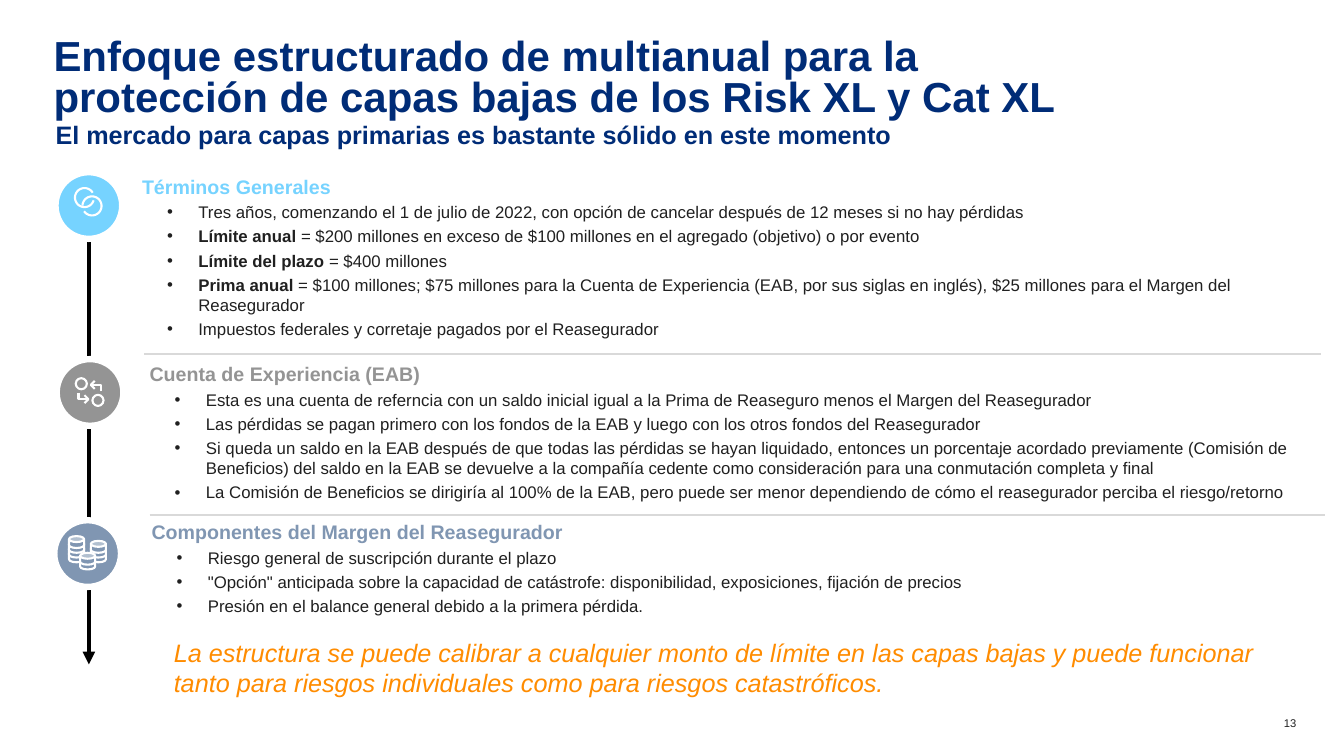
"""Build the slide on the multi-year structure for low layers."""
from math import cos, radians, sin

from lxml.etree import SubElement
from pptx import Presentation
from pptx.dml.color import RGBColor
from pptx.enum.shapes import MSO_CONNECTOR as Link, MSO_SHAPE as Kind
from pptx.enum.text import PP_ALIGN as Align
from pptx.oxml.ns import qn
from pptx.util import Cm, Pt

NAVY = RGBColor(0x00, 0x2C, 0x77)
INK = RGBColor(0x20, 0x20, 0x20)
SKY = RGBColor(0x76, 0xD3, 0xFF)
GRAY = RGBColor(0x94, 0x94, 0x94)
STEEL = RGBColor(0x80, 0x96, 0xB2)
ORANGE = RGBColor(0xFF, 0x8C, 0x00)
RULE = RGBColor(0xD9, 0xD9, 0xD9)
BLACK = RGBColor(0, 0, 0)
WHITE = RGBColor(0xFF, 0xFF, 0xFF)
THIN = 1.5

TERMS = [
    ("", "Tres años, comenzando el 1 de julio de 2022, con opción de cancelar "
         "después de 12 meses si no hay pérdidas"),
    ("Límite anual ", "= $200 millones en exceso de $100 millones en el agregado "
                      "(objetivo) o por evento"),
    ("Límite del plazo ", "= $400 millones"),
    ("Prima anual", " = $100 millones; $75 millones para la Cuenta de Experiencia "
                    "(EAB, por sus siglas en inglés), $25 millones para el Margen "
                    "del Reasegurador"),
    ("", "Impuestos federales y corretaje pagados por el Reasegurador"),
]
FUNDS = [
    ("", "Esta es una cuenta de referncia con un saldo inicial igual a la Prima de "
         "Reaseguro menos el Margen del Reasegurador"),
    ("", "Las pérdidas se pagan primero con los fondos de la EAB y luego con los "
         "otros fondos del Reasegurador"),
    ("", "Si queda un saldo en la EAB después de que todas las pérdidas se hayan "
         "liquidado, entonces un porcentaje acordado previamente (Comisión de "
         "Beneficios) del saldo en la EAB se devuelve a la compañía cedente como "
         "consideración para una conmutación completa y final"),
    ("", "La Comisión de Beneficios se dirigiría al 100% de la EAB, pero puede ser "
         "menor dependiendo de cómo el reasegurador perciba el riesgo/retorno"),
]
MARGIN = [
    ("", "Riesgo general de suscripción durante el plazo"),
    ("", "\"Opción\" anticipada sobre la capacidad de catástrofe: disponibilidad, "
         "exposiciones, fijación de precios"),
    ("", "Presión en el balance general debido a la primera pérdida."),
]


def style(font, size, color, bold=False, italic=False):
    """Set the look of a font."""
    font.name, font.size, font.bold, font.italic = "Arial", Pt(size), bold, italic
    font.color.rgb = color


def add_text(slide, box, text, size, color, bold=False, italic=False):
    """Add a text box without margins and return its frame."""
    frame = slide.shapes.add_textbox(*map(Cm, box)).text_frame
    frame.word_wrap = True
    frame.margin_left = frame.margin_right = 0
    frame.margin_top = frame.margin_bottom = 0
    frame.text = text
    for run in frame.paragraphs[0].runs:
        style(run.font, size, color, bold, italic)
    return frame


def add_block(slide, box, head, color, items):
    """Add a coloured heading with its bullets."""
    frame = add_text(slide, box, head, 14, color, True)
    for lead, rest in items:
        para = frame.add_paragraph()
        props = para._p.get_or_add_pPr()
        props.set("marL", str(Cm(1.42)))
        props.set("indent", str(-Cm(0.79)))
        SubElement(props, qn("a:buFont"), typeface="Arial")
        SubElement(props, qn("a:buChar"), char="•")
        para.level = 1
        para.space_before = Pt(2.8)
        for part in filter(None, (lead, rest)):
            run = para.add_run()
            run.text = part
            style(run.font, 12, INK, part == lead)


def add_line(slide, start, end, color, width):
    """Add a straight line and return its line element."""
    line = slide.shapes.add_connector(Link.STRAIGHT, *map(Cm, start + end))
    line.line.color.rgb = color
    line.line.width = Pt(width)
    SubElement(line._element.spPr, qn("a:effectLst"))
    return line.line._get_or_add_ln()


def add_form(slide, kind, box, fill, width):
    """Add a preset shape with a white outline."""
    form = slide.shapes.add_shape(kind, *map(Cm, box))
    form.shadow.inherit = False
    if fill is None:
        form.fill.background()
    else:
        form.fill.solid()
        form.fill.fore_color.rgb = fill
    form.line.color.rgb = WHITE
    form.line.width = Pt(width)
    return form


def add_stroke(slide, points):
    """Add an open white outline through the points."""
    first, *rest = [(Cm(x), Cm(y)) for x, y in points]
    maker = slide.shapes.build_freeform(*first)
    maker.add_line_segments(rest, close=False)
    form = maker.convert_to_shape()
    form.shadow.inherit = False
    form.fill.background()
    form.line.color.rgb = WHITE
    form.line.width = Pt(THIN)


def add_rings(slide):
    """Draw two linked rings, each with a gap."""
    size = 0.24
    for x, y, start, stop in ((2.13, 4.98, 17, 333), (2.32, 5.19, 182, 512)):
        turns = [radians(deg) for deg in range(start, stop, 6)]
        add_stroke(slide, [(x + size * cos(t), y + size * sin(t)) for t in turns])


def add_swap(slide):
    """Draw two circles and two arrows, alike under a half turn."""
    x, y, size = 2.26, 9.88, 0.14
    stem = ((0.28, -0.02), (0.28, -0.18), (0.05, -0.18))
    tip = ((0.13, -0.28), (0.03, -0.18), (0.13, -0.08))
    for sign in (1, -1):
        side = sign * 0.21 - size
        add_form(slide, Kind.OVAL, (x + side, y + side, 2 * size, 2 * size),
                 None, THIN)
        for part in (stem, tip):
            add_stroke(slide, [(x + sign * a, y + sign * b) for a, b in part])


def add_coins(slide):
    """Draw three stacks of coins, each from the bottom up."""
    for x, y, count in ((1.74, 13.51, 4), (2.29, 13.63, 3), (2.02, 13.93, 2)):
        for step in reversed(range(count)):
            coin = add_form(slide, Kind.CAN, (x, y + 0.12 * step, 0.38, 0.3),
                            STEEL, THIN)
            coin.adjustments[0] = 0.5


def main():
    """Build and save the slide."""
    deck = Presentation()
    deck.slide_width, deck.slide_height = Cm(33.87), Cm(19.05)
    slide = deck.slides.add_slide(deck.slide_layouts[6])

    title = add_text(slide, (1.35, 1.0, 31.17, 1.37),
                     "Enfoque estructurado de multianual para la \v"
                     "protección de capas bajas de los Risk XL y Cat XL",
                     30, NAVY, True)
    title.paragraphs[0].line_spacing = 0.8
    add_text(slide, (1.4, 3.0, 31.19, 0.89),
             "El mercado para capas primarias es bastante sólido en este momento",
             18, NAVY, True)
    page = add_text(slide, (31.88, 18.06, 0.79, 0.33), "13", 8, INK)
    page.paragraphs[0].alignment = Align.RIGHT

    axis = add_line(slide, (2.24, 4.98), (2.24, 16.74), BLACK, 3)
    SubElement(axis, qn("a:headEnd"), type="oval")
    SubElement(axis, qn("a:tailEnd"), type="triangle")
    for x, y, color in ((1.4, 4.34, SKY), (1.43, 9.05, GRAY), (1.37, 13.11, STEEL)):
        add_form(slide, Kind.OVAL, (x, y, 1.68, 1.68), color, 4.5)
    add_rings(slide)
    add_swap(slide)
    add_coins(slide)

    add_block(slide, (3.58, 4.4, 29.67, 3.3), "Términos Generales", SKY, TERMS)
    add_block(slide, (3.77, 9.13, 30.5, 3.2), "Cuenta de Experiencia (EAB)",
              GRAY, FUNDS)
    add_block(slide, (3.82, 13.11, 29.5, 3.73),
              "Componentes del Margen del Reasegurador", STEEL, MARGIN)
    add_line(slide, (3.64, 8.92), (33.3, 8.92), RULE, 1.5)
    add_line(slide, (3.77, 12.98), (33.38, 12.98), RULE, 1.5)
    add_text(slide, (4.38, 16.06, 28.07, 1.55),
             "La estructura se puede calibrar a cualquier monto de límite en las "
             "capas bajas y puede funcionar tanto para riesgos individuales como "
             "para riesgos catastróficos.", 18, ORANGE, italic=True)
    deck.save("out.pptx")


if __name__ == "__main__":
    main()
